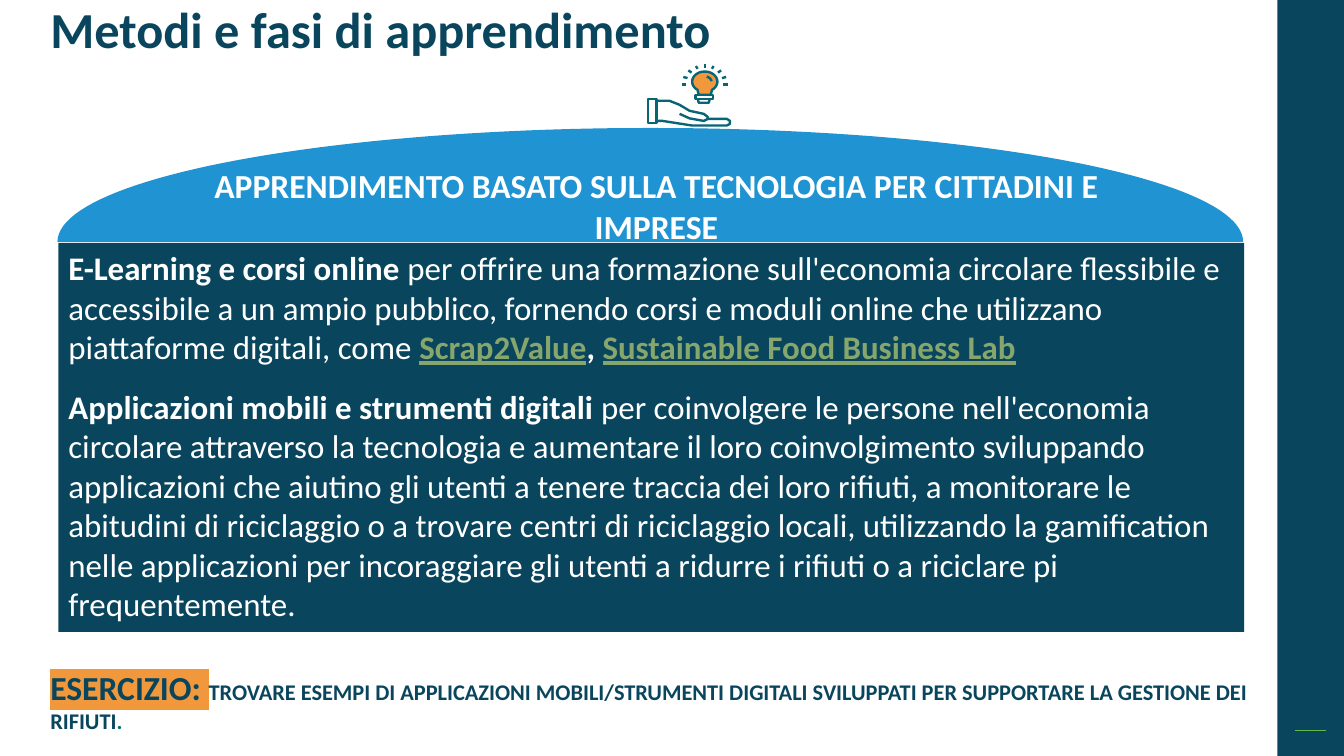
from dataclasses import dataclass
from math import cos, radians, sin
from typing import NamedTuple, Optional, Sequence

from lxml.etree import SubElement
from pptx import Presentation
from pptx.dml.color import RGBColor
from pptx.enum.shapes import MSO_CONNECTOR, MSO_SHAPE
from pptx.enum.text import MSO_ANCHOR, PP_ALIGN
from pptx.oxml.ns import qn
from pptx.util import Emu, Inches, Pt

# Grid: square cells of a tenth of an inch
COLS, ROWS = 133.3, 75
CELL = Inches(0.1)


@dataclass(frozen=True)
class Theme:
    font: str = "Calibri"
    navy: str = "09465E"
    blue: str = "2094D2"
    teal: str = "086575"
    orange: str = "F1983D"
    green: str = "60BA47"
    link: str = "87A66E"
    white: str = "FFFFFF"
    final_dot: str = "086D6E"
    title: float = 36
    heading: float = 24
    body: float = 23.5
    small: float = 16
    stroke: float = 1.7


THEME = Theme()


class Point(NamedTuple):
    x: float
    y: float


class Box(NamedTuple):
    col: float
    row: float
    cols: float
    rows: float


class Stroke(NamedTuple):
    points: Sequence[Point]
    closed: bool
    fill: Optional[str] = None


def cells(n: float) -> Emu:
    return Emu(round(n * CELL))


def points(*pairs: tuple) -> list:
    return [Point(*pair) for pair in pairs]


def arc(center: Point, rx: float, ry: float, start: int, end: int, step: int) -> list:
    """Points on an ellipse; angles in degrees, clockwise from the right."""
    return [Point(center.x + rx * cos(radians(a)), center.y + ry * sin(radians(a)))
            for a in range(start, end + 1, step)]


def paint(s, fill: Optional[str] = None, line: Optional[str] = None) -> None:
    s.shadow.inherit = False
    if fill:
        s.fill.solid()
        s.fill.fore_color.rgb = RGBColor.from_string(fill)
    else:
        s.fill.background()
    if line:
        s.line.color.rgb = RGBColor.from_string(line)
        s.line.width = Pt(THEME.stroke)
    else:
        s.line.fill.background()


def add_rect(slide, box: Box, fill: str):
    s = slide.shapes.add_shape(MSO_SHAPE.RECTANGLE, *map(cells, box))
    paint(s, fill)
    return s


def add_outline(slide, stroke: Stroke, line: Optional[str] = None) -> None:
    first, *rest = [(cells(p.x), cells(p.y)) for p in stroke.points]
    builder = slide.shapes.build_freeform(*first)
    builder.add_line_segments(rest, close=stroke.closed)
    paint(builder.convert_to_shape(), stroke.fill, line)


def add_line(slide, start: Point, end: Point, color: str, width: float) -> None:
    s = slide.shapes.add_connector(MSO_CONNECTOR.STRAIGHT, *map(cells, (*start, *end)))
    s.line.color.rgb = RGBColor.from_string(color)
    s.line.width = Pt(width)
    SubElement(s._element.spPr, qn("a:effectLst"))


def add_run(p, text: str, *, size: float, color: str, bold: bool = True,
            underline: bool = False, highlight: Optional[str] = None) -> None:
    r = p.add_run()
    r.text = text
    r.font.name, r.font.size, r.font.bold = THEME.font, Pt(size), bold
    r.font.color.rgb = RGBColor.from_string(color)
    if underline:
        r.font.underline = True
    if highlight:
        mark = SubElement(r._r.get_or_add_rPr(), qn("a:highlight"))
        SubElement(mark, qn("a:srgbClr")).set("val", highlight)
        r._r.rPr.find(qn("a:solidFill")).addnext(mark)


def first_paragraph(s, align=PP_ALIGN.LEFT):
    tf = s.text_frame
    tf.word_wrap = True
    tf.vertical_anchor = MSO_ANCHOR.TOP
    p = tf.paragraphs[0]
    p.alignment = align
    return p


def add_text_box(slide, box: Box, align=PP_ALIGN.LEFT):
    return first_paragraph(slide.shapes.add_textbox(*map(cells, box)), align)


def add_idea_icon(slide) -> None:
    # Light bulb with its base
    bulb = Point(69.9, 8.1)
    strokes = [
        Stroke(arc(bulb, 1.25, 1, 125, 415, 10) + points((70.5, 9.4), (69.3, 9.4)),
               True, THEME.orange),
        Stroke(points((70.1, 7.6), (70.4, 7.75), (70.6, 8.05)), False),
        Stroke(points((69, 9.4), (70.7, 9.4), (70.7, 9.8), (69, 9.8)), True, THEME.white),
        Stroke(points((69.2, 9.8), (69.3, 10.2), (70.3, 10.2), (70.4, 9.8)), False),
        # Open hand: cuff, palm, thumb
        Stroke(points((64.25, 9.8), (65.1, 9.8), (65.1, 12.2), (64.25, 12.2)), True),
        Stroke(points((65.1, 10), (66.4, 10), (67.4, 10.4), (68.4, 11), (69.8, 11.3),
                      (70.2, 11.6), (70.2, 11.8), (72.1, 11.8), (72.4, 12), (72.4, 12.3),
                      (72.1, 12.45), (68.6, 12.45), (65.7, 12), (65.1, 12)), True),
        Stroke(points((67.4, 11.3), (68.4, 11.75), (69.8, 12), (70.2, 11.8)), False),
    ]
    for stroke in strokes:
        add_outline(slide, stroke, THEME.teal)
    # Rays, evenly spread over the upper half
    glow = Point(69.9, 8.4)
    for i in range(9):
        a = radians(180 + i * 22.5)
        inner, outer = (Point(glow.x + rx * cos(a), glow.y + ry * sin(a))
                        for rx, ry in ((1.85, 1.7), (2.3, 2)))
        add_line(slide, inner, outer, THEME.teal, THEME.stroke)


def main() -> None:
    prs = Presentation()
    prs.slide_width, prs.slide_height = cells(COLS), cells(ROWS)
    slide = prs.slides.add_slide(prs.slide_layouts[6])
    t = THEME

    # Side band
    add_rect(slide, Box(126.7, 0, COLS - 126.7, ROWS), t.navy)
    add_line(slide, Point(128.4, 72.5), Point(131.5, 72.5), t.green, 1)

    # Title
    p = add_text_box(slide, Box(4, 0, 81.5, 5.5))
    p.line_spacing = 0.9
    add_run(p, "Metodi e fasi di apprendimento", size=t.title, color=t.navy)

    # Dome
    add_outline(slide, Stroke(arc(Point(64.5, 24), 58.8, 11.3, 180, 360, 2), True, t.blue))

    # Body panel
    p = first_paragraph(add_rect(slide, Box(5.8, 24.1, 117.6, 38.6), t.navy))
    body = dict(size=t.body, color=t.white)
    link = dict(size=t.body, color=t.link, underline=True)
    add_run(p, "E-Learning e corsi online ", **body)
    add_run(p, "per offrire una formazione sull'economia circolare flessibile e accessibile "
               "a un ampio pubblico, fornendo corsi e moduli online che utilizzano "
               "piattaforme digitali, come ", bold=False, **body)
    add_run(p, "Scrap2Value", **link)
    add_run(p, ", ", **body)
    add_run(p, "Sustainable Food Business Lab", **link)
    tf = slide.shapes[-1].text_frame
    p = tf.add_paragraph()
    p.alignment, p.space_before = PP_ALIGN.LEFT, Pt(14.4)
    add_run(p, "Applicazioni mobili e strumenti digitali ", **body)
    add_run(p, "per coinvolgere le persone nell'economia circolare attraverso la tecnologia "
               "e aumentare il loro coinvolgimento sviluppando applicazioni che aiutino gli "
               "utenti a tenere traccia dei loro rifiuti, a monitorare le abitudini di "
               "riciclaggio o a trovare centri di riciclaggio locali, utilizzando la "
               "gamification nelle applicazioni per incoraggiare gli utenti a ridurre i "
               "rifiuti o a riciclare pi frequentemente.", bold=False, **body)

    add_idea_icon(slide)

    # Dome heading
    p = add_text_box(slide, Box(19.2, 15.9, 91.8, 9), PP_ALIGN.CENTER)
    add_run(p, "APPRENDIMENTO BASATO SULLA TECNOLOGIA PER CITTADINI E IMPRESE",
            size=t.heading, color=t.white)

    # Exercise
    p = add_text_box(slide, Box(4, 65.7, 123.2, 7.7))
    add_run(p, "ESERCIZIO: ", size=t.heading, color=t.navy, highlight=t.orange)
    add_run(p, "TROVARE ESEMPI DI APPLICAZIONI MOBILI/STRUMENTI DIGITALI SVILUPPATI PER "
               "SUPPORTARE LA GESTIONE DEI RIFIUTI", size=t.small, color=t.navy)
    add_run(p, ".", size=t.small, color=t.final_dot)

    prs.save("out.pptx")


if __name__ == "__main__":
    main()
